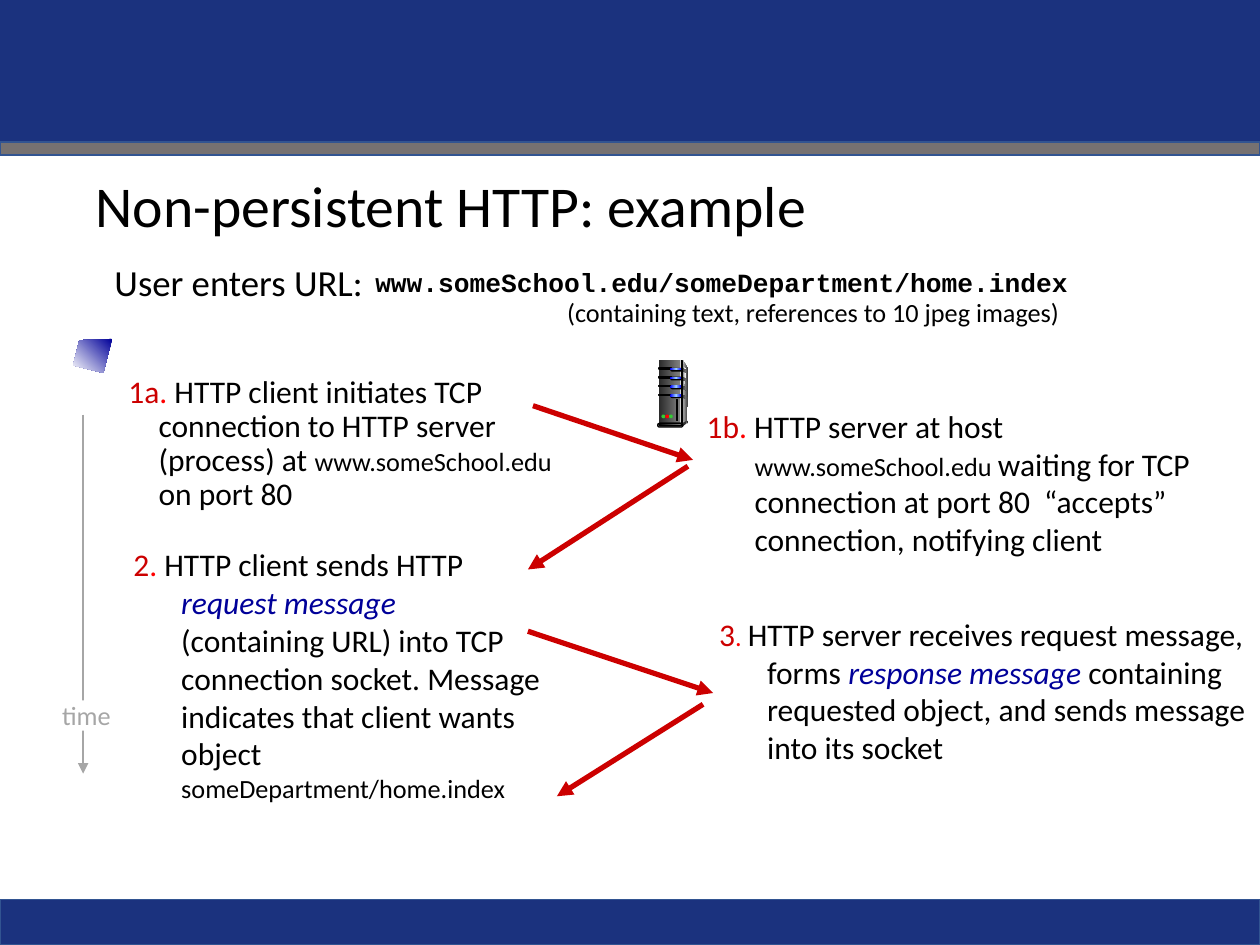
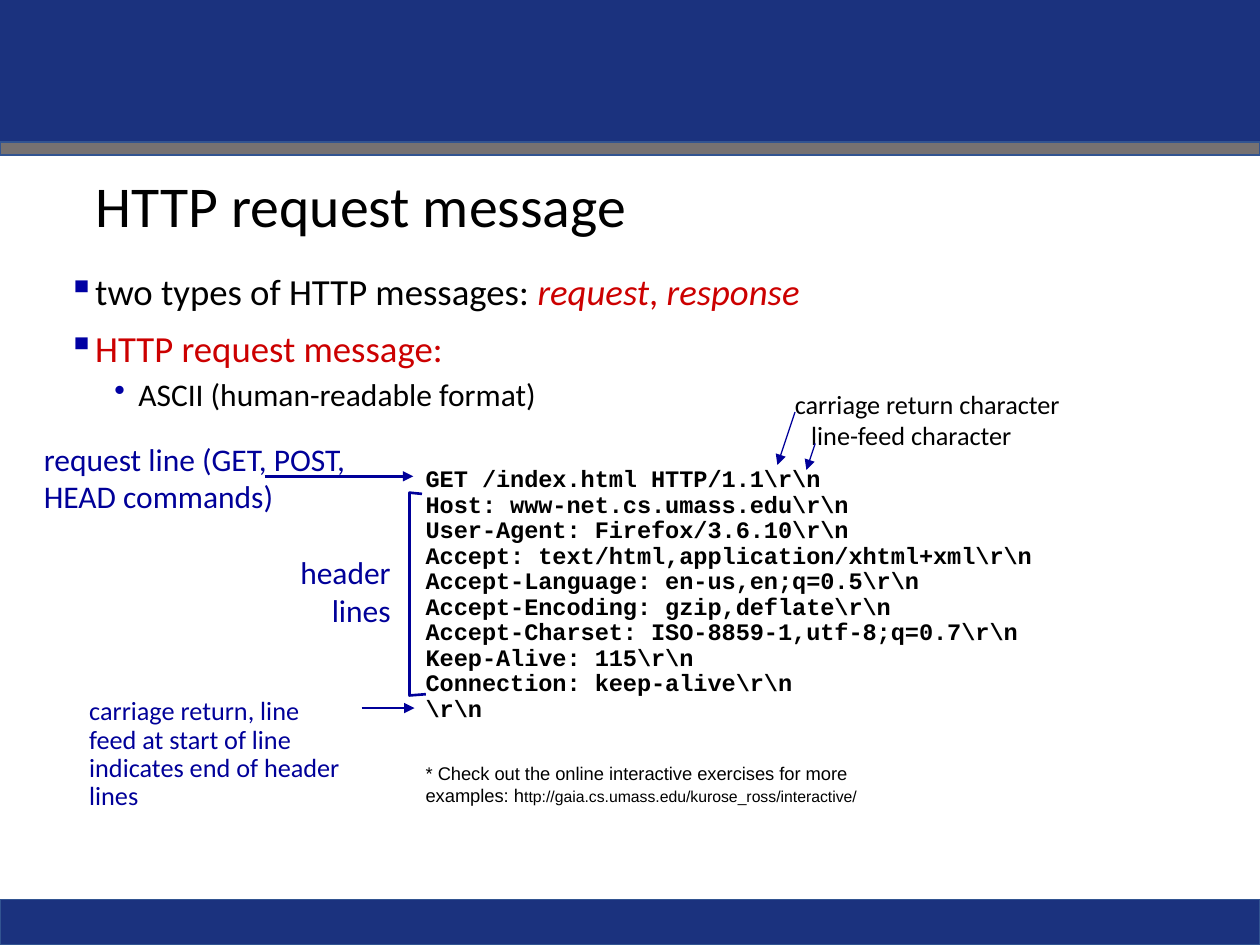
from dataclasses import dataclass

from lxml.etree import SubElement
from pptx import Presentation
from pptx.dml.color import RGBColor
from pptx.enum.shapes import MSO_CONNECTOR as CONN, MSO_SHAPE as SHAPE
from pptx.enum.text import MSO_ANCHOR as ANCHOR, PP_ALIGN as ALIGN
from pptx.oxml.ns import qn
from pptx.util import Emu, Pt

PX = 9144  # EMU per px, 100 px to the inch


@dataclass(frozen=True)
class Theme:
    band: str = "1B327E"
    band_edge: str = "325491"
    stripe: str = "767171"
    ink: str = "000000"
    paper: str = "FFFFFF"
    red: str = "CC0000"
    dot_red: str = "FF0000"
    blue: str = "000099"
    bullet: str = "0000A3"
    muted: str = "A6A6A6"
    dark: str = "292929"
    shade: str = "333333"
    steel: str = "808080"
    light: str = "DDDDDD"
    lamp: str = "0000FF"
    lamp_glow: str = "99CCFF"
    led: str = "33CC33"
    body_font: str = "Calibri"
    code_font: str = "Courier New"
    note_font: str = "Arial"
    title: float = 33
    lead: float = 21
    body: float = 18
    small: float = 15
    code: float = 13.5
    note: float = 10.5
    link: float = 9


T = Theme()


# Shared helpers
def px(*lengths):
    return [Emu(n * PX) for n in lengths]


def rgb(color):
    return RGBColor.from_string(color)


def paint(shape, fill=None, line=None, width=0.75, angle=0):
    """Fill with one colour, or with a gradient when given several."""
    shape.shadow.inherit = False
    if fill is None:
        shape.fill.background()
    elif isinstance(fill, str):
        shape.fill.solid()
        shape.fill.fore_color.rgb = rgb(fill)
    else:
        shape.fill.gradient()
        shape.fill.gradient_angle = angle
        stops = shape._element.spPr.find(qn("a:gradFill")).find(qn("a:gsLst"))
        stops.clear()
        for i, color in enumerate(fill):
            pos = str(100000 * i // (len(fill) - 1))
            stop = SubElement(stops, qn("a:gs"), pos=pos)
            SubElement(stop, qn("a:srgbClr"), val=color)
    if line:
        shape.line.color.rgb = rgb(line)
        shape.line.width = Pt(width)
    else:
        shape.line.fill.background()


def block(s, x, y, w, h, fill, kind=SHAPE.RECTANGLE, **style):
    sp = s.shapes.add_shape(kind, *px(x, y, w, h))
    if kind == SHAPE.ROUNDED_RECTANGLE:
        sp.adjustments[0] = 0.5
    paint(sp, fill, **style)


def outline(s, x, y, points, fill=None, close=True, **style):
    (x0, y0), *rest = [(x + dx, y + dy) for dx, dy in points]
    builder = s.shapes.build_freeform(x0, y0, scale=PX)
    builder.add_line_segments(rest, close=close)
    paint(builder.convert_to_shape(), fill, **style)


def arrow(s, x, y, start, end, color, width):
    c = s.shapes.add_connector(
        CONN.STRAIGHT, *px(x + start[0], y + start[1], x + end[0], y + end[1]))
    c.line.color.rgb = rgb(color)
    c.line.width = Pt(width)
    spPr = c._element.spPr
    SubElement(spPr.find(qn("a:ln")), qn("a:tailEnd"), type="triangle")
    SubElement(spPr, qn("a:effectLst"))


def write(tf, runs, size=T.body, color=T.ink, font=T.body_font, bold=False,
          align=None, spacing=None, before=0, indent=None, bullet=None):
    """Add a paragraph; a run is text, or text with its own format."""
    p = tf.paragraphs[0]
    if p.runs:
        p = tf.add_paragraph()
        p.space_before = Pt(before)
    p.alignment = align
    p.line_spacing = spacing
    pPr = p._p.get_or_add_pPr()
    if indent:
        pPr.set("marL", str(indent[0] * PX))
        pPr.set("indent", str(indent[1] * PX))
    if bullet:
        tint = SubElement(pPr, qn("a:buClr"))
        SubElement(tint, qn("a:srgbClr"), val=T.bullet)
        SubElement(pPr, qn("a:buChar"), char=bullet)
    for run in [runs] if isinstance(runs, str) else runs:
        text, own = (run, {}) if isinstance(run, str) else run
        r = p.add_run()
        r.text = text
        r.font.name = font
        r.font.bold = bold
        r.font.italic = own.get("italic", False)
        r.font.size = Pt(own.get("size", size))
        r.font.color.rgb = rgb(own.get("color", color))


def text_box(s, x, y, w, h, *paras, anchor=ANCHOR.TOP, **fmt):
    tf = s.shapes.add_textbox(*px(x, y, w, h)).text_frame
    tf.word_wrap = True
    tf.vertical_anchor = anchor
    for runs in paras:
        write(tf, runs, **fmt)
    return tf


def base_slide(prs, title):
    s = prs.slides.add_slide(prs.slide_layouts[6])
    block(s, 0, 714, 1000, 36, T.band, line=T.band_edge, width=1)
    block(s, 0, 0, 1000, 113, T.band)
    block(s, 0, 113, 1000, 10, T.stripe, line=T.band_edge, width=1)
    text_box(s, 66, 129, 862, 73, title, size=T.title, spacing=0.9,
             anchor=ANCHOR.MIDDLE)
    return s


# Slide 1 regions
def url_heading(s, x, y):
    text_box(s, x, y, 651, 38, "User enters URL:", size=T.lead,
             spacing=0.9, indent=(39, -24))
    text_box(s, x + 318, y + 25, 523, 35,
             "(containing text, references to 10 jpeg images)",
             size=T.small, align=ALIGN.CENTER)
    text_box(s, x + 222, y + 5, 651, 38,
             "www.someSchool.edu/someDepartment/home.index",
             size=T.small, font=T.code_font, bold=True, spacing=0.85,
             indent=(38, -38))


def time_axis(s, x, y):
    arrow(s, x, y, (27, 0), (27, 285), T.muted, 1.5)
    block(s, x + 1, y + 227, 54, 24, T.paper)
    text_box(s, x - 10, y + 221, 79, 35, "time", size=T.small,
             color=T.muted, align=ALIGN.CENTER)


def steps(s, x, y):
    host = ("www.someSchool.edu ", {"size": T.small})

    def step(dx, dy, w, h, number, *runs, dot=".", dot_size=T.body,
             indent=(38, -38), spacing=None):
        lead = [(number, {"color": T.red}),
                (dot, {"color": T.dot_red, "size": dot_size})]
        text_box(s, x + dx, y + dy, w, h, lead + list(runs),
                 indent=indent, spacing=spacing)

    def term(text):
        return text, {"color": T.blue, "italic": True}

    step(0, 0, 398, 156, "1a",
         " HTTP client initiates TCP connection to HTTP server (process) at ",
         host, "on port 80", indent=(39, -24), spacing=0.9)
    step(19, 134, 345, 88, "2", " HTTP client sends HTTP ",
         term("request message"),
         " (containing URL) into TCP connection socket. Message indicates "
         "that client wants object ",
         ("someDepartment/home.index", {"size": T.small}))
    step(474, 24, 442, 123, "1b", " HTTP server at host ", host,
         "waiting for TCP connection at port 80  “accepts” connection, "
         "notifying client")
    step(484, 189, 442, 148, "3",
         "HTTP server receives request message, forms ",
         term("response message"),
         " containing requested object, and sends message into its socket",
         dot=". ", dot_size=T.small)

    # Messages between client and server
    for start, end in [((346, 28), (473, 71)), ((469, 76), (342, 158)),
                       ((342, 207), (489, 256)), ((481, 265), (365, 338))]:
        arrow(s, x, y, start, end, T.red, 3)


def client_icon(s, x, y):
    outline(s, x, y, [(31, 0), (5, 1), (0, 21), (24, 27)],
            (T.blue, T.paper), angle=225)


def server_icon(s, x, y):
    metal = (T.dark, T.steel)
    rounded = SHAPE.ROUNDED_RECTANGLE
    # Case
    outline(s, x, y, [(20, 0), (24, 7), (23, 48), (19, 50)],
            (T.light, T.shade))
    block(s, x + 1, y, 17, 50, metal)
    outline(s, x, y, [(20, 3), (22, 7), (20, 49)], (T.steel, T.paper))
    # Drive slots with lamps and side vents
    for dy in (6, 13, 20, 27):
        block(s, x + 1, y + dy, 10, 1, T.ink, line=T.ink)
        block(s, x + 10, y + dy, 10, 3, T.ink, rounded)
        block(s, x + 10, y + dy, 9, 2, (T.lamp, T.lamp_glow, T.lamp), rounded)
        outline(s, x, y + dy, [(19, 0), (23, 2), (23, 4), (19, 2)], metal)
    block(s, x + 19, y, 1, 50, (T.shade, T.light, T.shade), line=T.ink)
    # Foot
    block(s, x + 23, y + 48, 1, 2, T.shade, SHAPE.OVAL)
    outline(s, x, y, [(19, 50), (19, 53), (23, 50), (23, 48)], T.shade)
    block(s, x, y + 50, 20, 3, T.light, rounded, line=T.ink)
    block(s, x + 1, y + 50, 18, 2, (T.ink, T.steel), rounded, line=T.ink)
    # Status lights
    for i, color in enumerate((T.led, T.dot_red, T.led)):
        block(s, x + 3 + 3 * i, y + 43, 3, 3, color, SHAPE.OVAL)
    block(s, x + 15, y + 31, 1, 17, T.dark, line=T.ink)


# Slide 2 regions
def message_types(s, x, y):
    red = {"color": T.red}
    term = {"color": T.red, "italic": True}
    tf = text_box(s, x, y, 956, 117,
                  ["two types of HTTP messages: ", ("request", term),
                   (", ", red), ("response", term)],
                  [("HTTP request message:", red)],
                  size=T.lead, spacing=0.9, before=10, indent=(19, -19),
                  bullet="▪")
    write(tf, "ASCII (human-readable format)", spacing=0.9, before=5,
          indent=(56, -19), bullet="•")


def request_listing(s, x, y):
    lines = ["GET /index.html HTTP/1.1", "Host: www-net.cs.umass.edu",
             "User-Agent: Firefox/3.6.10",
             "Accept: text/html,application/xhtml+xml",
             "Accept-Language: en-us,en;q=0.5", "Accept-Encoding: gzip,deflate",
             "Accept-Charset: ISO-8859-1,utf-8;q=0.7", "Keep-Alive: 115",
             "Connection: keep-alive", ""]
    text_box(s, x, y, 510, 215, *[line + r"\r\n" for line in lines],
             size=T.code, font=T.code_font, bold=True, spacing=0.9,
             indent=(38, -38))
    text_box(s, x, y + 234, 370, 45,
             ["* Check out the online interactive exercises for more "
              "examples: h",
              ("ttp://gaia.cs.umass.edu/kurose_ross/interactive/",
               {"size": T.link})], size=T.note, font=T.note_font)


def request_callouts(s, x, y):
    # Parts of the message, on the left
    text_box(s, x, y + 41, 300, 101, "request line (GET, POST,",
             "HEAD commands)", color=T.blue)
    outline(s, x, y, [(310, 89), (300, 88), (300, 249), (313, 248)],
            close=False, line=T.blue, width=1.5)
    text_box(s, x + 195, y + 131, 100, 71, "header", "lines", color=T.blue,
             align=ALIGN.RIGHT)
    text_box(s, x + 36, y + 246, 227, 101,
             "carriage return, line feed at start of line indicates end of "
             "header lines", size=T.small, color=T.blue, spacing=0.9)
    # Line-end characters, above
    text_box(s, x + 596, y, 240, 35, "carriage return character",
             size=T.small)
    text_box(s, x + 609, y + 25, 190, 35, "line-feed character",
             size=T.small)
    for start, end, width in [((262, 259), (304, 259), 1.5),
                              ((185, 75), (303, 75), 1.5),
                              ((606, 24), (592, 66), 0.75),
                              ((622, 49), (615, 70), 0.75)]:
        arrow(s, x, y, start, end, T.blue, width)


def main():
    prs = Presentation()
    prs.slide_width, prs.slide_height = px(1000, 750)

    s = base_slide(prs, "Non-persistent HTTP: example")
    time_axis(s, 39, 329)
    url_heading(s, 66, 205)
    steps(s, 77, 294)
    client_icon(s, 58, 269)
    server_icon(s, 522, 286)

    s = base_slide(prs, "HTTP request message")
    message_types(s, 44, 212)
    request_listing(s, 328, 366)
    request_callouts(s, 25, 303)

    prs.save("out.pptx")


if __name__ == "__main__":
    main()
